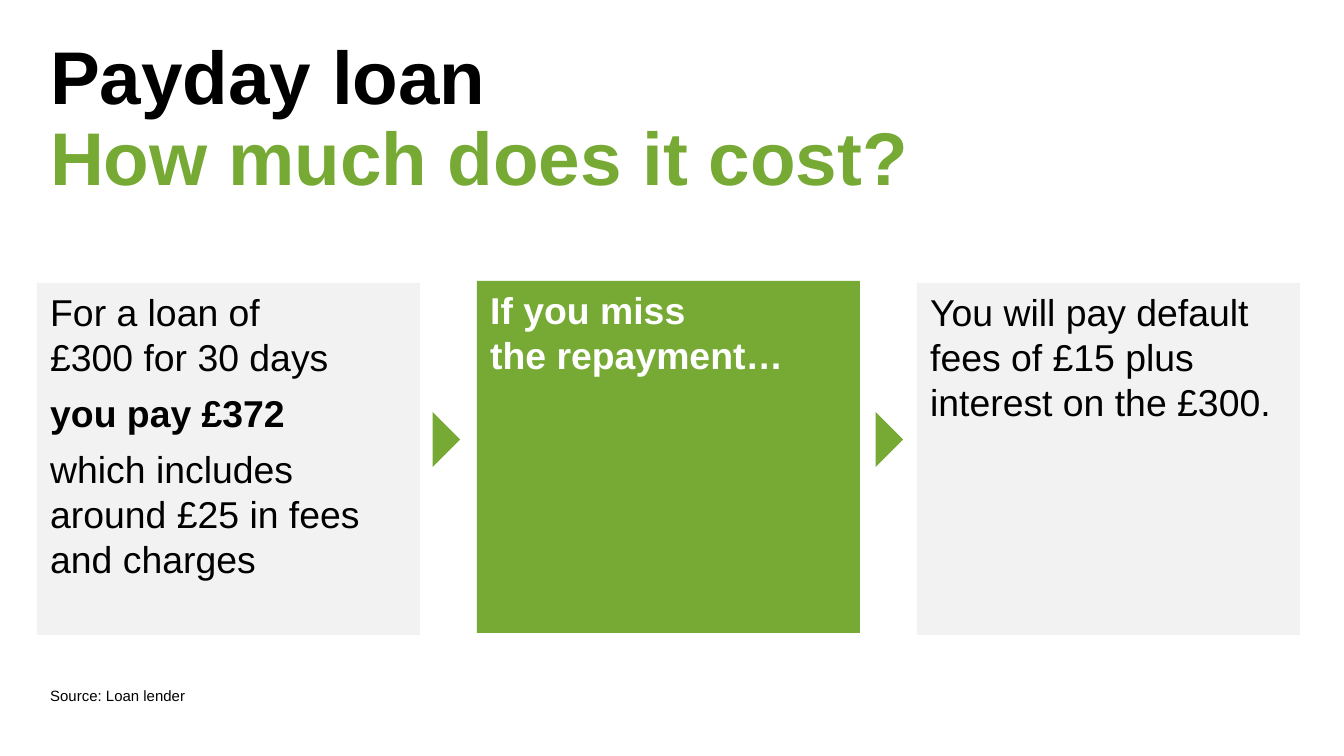
"""Build the payday loan cost slide."""
from pptx import Presentation
from pptx.dml.color import RGBColor
from pptx.enum.shapes import MSO_SHAPE as SHAPE
from pptx.enum.text import MSO_ANCHOR as ANCHOR, PP_ALIGN as ALIGN
from pptx.util import Emu, Pt

GREEN = RGBColor(0x76, 0xAA, 0x35)
GREY = RGBColor(0xF2, 0xF2, 0xF2)
BLACK = RGBColor(0, 0, 0)
WHITE = RGBColor(255, 255, 255)


def px(*values):
    return [Emu(round(v * 914400 / 134.4)) for v in values]


def style(p, size, color, bold=False):
    p.alignment = ALIGN.LEFT
    p.font.name = "Arial"
    p.font.size = Pt(size)
    p.font.bold = bold
    p.font.color.rgb = color


prs = Presentation()
prs.slide_width, prs.slide_height = px(1344, 756)
s = prs.slides.add_slide(prs.slide_layouts[6])

panels = [
    (37, 283, GREY, BLACK, [
        ("For a loan of\v£300 for 30 days", False),
        ("you pay £372", True),
        ("which includes around £25 in fees and charges", False),
    ]),
    (477, 281, GREEN, WHITE, [("If you miss\vthe repayment…", True)]),
    (917, 283, GREY, BLACK, [
        ("You will pay default fees of £15 plus interest on the £300.", False),
    ]),
]
for x, y, fill, color, lines in panels:
    sp = s.shapes.add_shape(SHAPE.RECTANGLE, *px(x, y, 383, 352))
    sp.shadow.inherit = False
    sp.fill.solid()
    sp.fill.fore_color.rgb = fill
    sp.line.fill.background()
    tf = sp.text_frame
    tf.word_wrap = True
    tf.vertical_anchor = ANCHOR.TOP
    for i, (text, bold) in enumerate(lines):
        p = tf.add_paragraph() if i else tf.paragraphs[0]
        p.text = text
        p.space_before = Pt(6)
        style(p, 20, color, bold)

title = s.shapes.add_textbox(*px(37, 32, 1280, 178))
tf = title.text_frame
tf.word_wrap = True
tf.vertical_anchor = ANCHOR.MIDDLE
p = tf.paragraphs[0]
p.line_spacing = 0.9
style(p, 40, BLACK, True)
p.add_run().text = "Payday loan"
p.add_line_break()
r = p.add_run()
r.text = "How much does it cost?"
r.font.color.rgb = GREEN

source = s.shapes.add_textbox(*px(37, 680, 171, 32))
source.text_frame.word_wrap = False
p = source.text_frame.paragraphs[0]
p.text = "Source: Loan lender"
style(p, 8, BLACK)

for x in (413, 856):
    sp = s.shapes.add_shape(SHAPE.RIGHT_TRIANGLE, *px(x, 420, 39, 39))
    sp.rotation = 225
    sp.shadow.inherit = False
    sp.fill.solid()
    sp.fill.fore_color.rgb = GREEN
    sp.line.fill.background()

prs.save("out.pptx")
